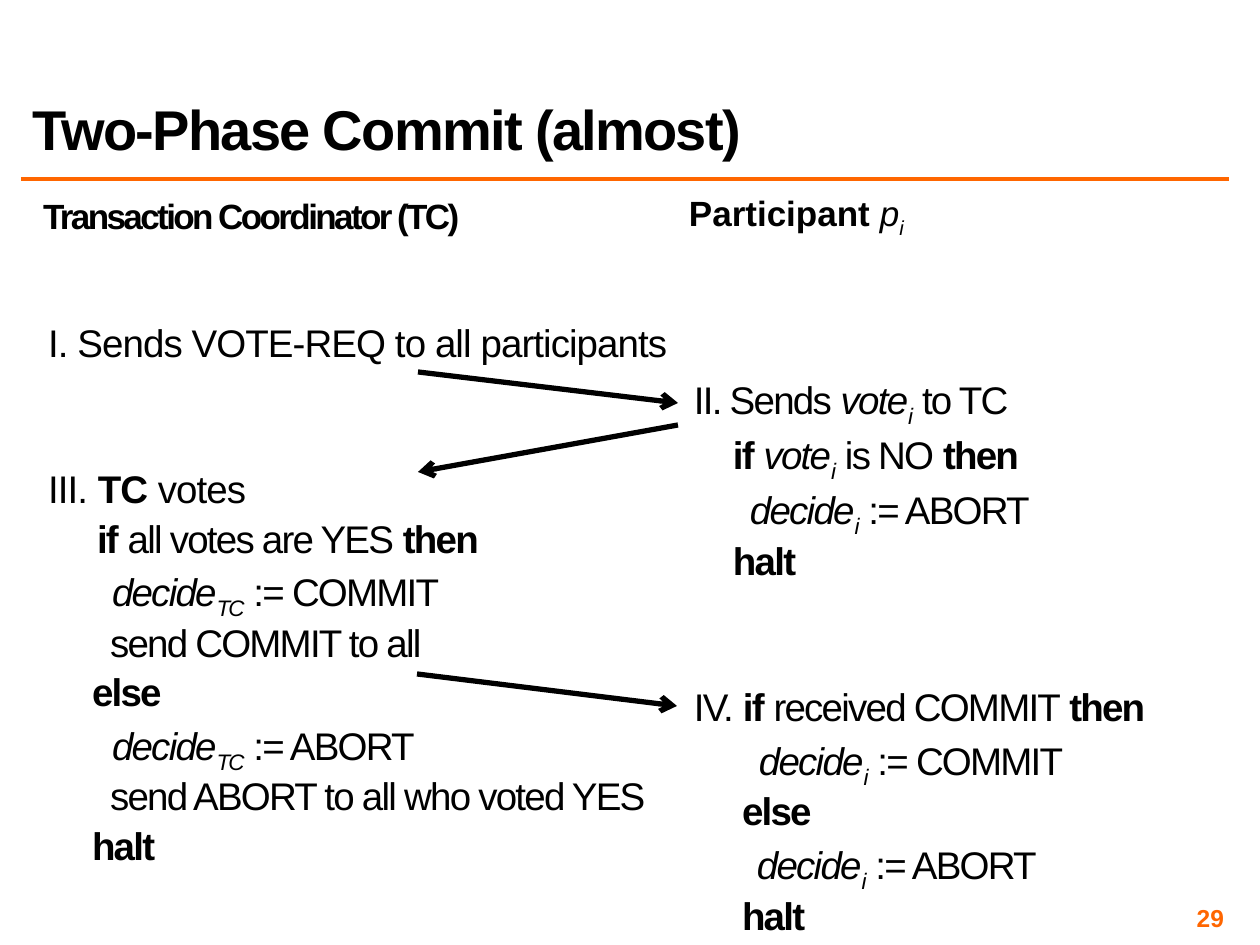
from dataclasses import dataclass
from pptx import Presentation
from pptx.dml.color import RGBColor
from pptx.enum.shapes import MSO_CONNECTOR as Connector
from pptx.enum.text import MSO_ANCHOR as Anchor, MSO_AUTO_SIZE as AutoSize, PP_ALIGN as Align
from pptx.oxml.ns import qn
from pptx.util import Emu, Pt
from lxml.etree import SubElement

PX = 914400 // 126


@dataclass(frozen=True)
class Theme:
    font: str = "Arial"
    ink: RGBColor = RGBColor(0x00, 0x00, 0x00)
    accent: RGBColor = RGBColor(0xFF, 0x66, 0x00)
    title: int = 32
    heading: int = 20
    body: int = 22
    number: int = 14
    gap: float = 4.4        # before each line
    step_gap: float = 60    # before the next protocol step


THEME = Theme()

# Spans are (text, style): b bold, i italic, s subscript
TITLE = [("Two-Phase Commit (almost)", "b")]
COORDINATOR = [("Transaction Coordinator (TC)", "b")]
PARTICIPANT = [("Participant ", "b"), ("p", "i"), ("i", "is")]
NUMBER = [("29", "b")]
VOTE = [("vote", "i"), ("i", "is")]
DECIDE = [("decide", "i"), ("i", "is")]
DECIDE_TC = [("decide", "i"), ("TC", "is")]

# Lines are (indent px, letter spacing pt, space before pt, spans)
COORDINATOR_STEPS = [
    (0, -0.5, THEME.gap, [("I. Sends VOTE-REQ to all participants", "")]),
    (0, -0.5, THEME.step_gap, [("III. ", ""), ("TC ", "b"), ("votes", "")]),
    (49, -1, THEME.gap, [("if", "b"), (" all votes are YES ", ""), ("then", "b")]),
    (64, -1, THEME.gap, DECIDE_TC + [(" := COMMIT", "")]),
    (62, -1, THEME.gap, [("send COMMIT to all", "")]),
    (44, -1, THEME.gap, [("else", "b")]),
    (64, -1, THEME.gap, DECIDE_TC + [(" := ABORT", "")]),
    (62, -1, THEME.gap, [("send ABORT to all who voted YES", "")]),
    (44, -1, THEME.gap, [("halt", "b")]),
]
PARTICIPANT_STEPS = [
    (0, -1, THEME.gap, [("II. Sends ", "")] + VOTE + [(" to TC", "")]),
    (39, -1, THEME.gap, [("if ", "b")] + VOTE + [(" is NO ", ""), ("then", "b")]),
    (56, -1, THEME.gap, DECIDE + [(" := ABORT", "")]),
    (39, -1, THEME.gap, [("halt", "b")]),
    (0, -1, THEME.step_gap, [("IV. ", ""), ("if", "b"), (" received COMMIT ", ""), ("then", "b")]),
    (65, -1, THEME.gap, DECIDE + [(" := COMMIT", "")]),
    (48, -1, THEME.gap, [("else", "b")]),
    (63, -1, THEME.gap, DECIDE + [(" := ABORT", "")]),
    (48, -1, THEME.gap, [("halt", "b")]),
]

# Messages: tip x, tip y, origin x, origin y
MESSAGES = [(678, 403, 418, 372), (418, 472, 678, 425), (677, 706, 417, 674)]


def place(box, left, top, width, height, inset, anchor):
    box.left, box.top, box.width, box.height = (Emu(v * PX) for v in (left, top, width, height))
    frame = box.text_frame
    frame.word_wrap = True
    frame.auto_size = AutoSize.NONE
    frame.vertical_anchor = anchor
    frame.margin_left = frame.margin_right = Emu(inset * PX)
    frame.margin_top = frame.margin_bottom = Emu(min(inset, 6) * PX)
    return frame


def write(para, spans, size, spacing=0, color=THEME.ink, align=Align.LEFT):
    para.alignment = align
    for text, style in spans:
        span = para.add_run()
        span.text = text
        font = span.font
        font.name, font.size = THEME.font, Pt(size)
        font.color.rgb = color
        font.bold, font.italic = "b" in style, "i" in style
        props = span._r.get_or_add_rPr()
        if spacing:
            props.set("spc", str(int(spacing * 100)))
        if "s" in style:
            props.set("baseline", "-25000")


def write_steps(frame, lines):
    for index, (indent, spacing, before, spans) in enumerate(lines):
        para = frame.add_paragraph() if index else frame.paragraphs[0]
        write(para, spans, THEME.body, spacing)
        para.line_spacing, para.space_before = 0.9, Pt(before)
        props = para._p.get_or_add_pPr()
        props.set("marL", str(indent * PX))
        props.set("indent", "0")
        SubElement(props, qn("a:buNone"))


def draw_line(page, ends, color, width, arrow=False):
    line = page.shapes.add_connector(Connector.STRAIGHT, *(Emu(v * PX) for v in ends))
    line.line.color.rgb, line.line.width = color, Pt(width)
    if arrow:
        SubElement(line.line._get_or_add_ln(), qn("a:headEnd"), type="arrow")
    SubElement(line._element.spPr, qn("a:effectLst"))


def main():
    deck = Presentation()
    deck.slide_width, deck.slide_height = Emu(1260 * PX), Emu(945 * PX)
    page = deck.slides.add_slide(deck.slide_layouts[3])
    title, left_body, right_body = page.placeholders

    # Title and rule
    frame = place(title, 21, 19, 1103, 148, 12, Anchor.BOTTOM)
    write(frame.paragraphs[0], TITLE, THEME.title, -1)
    frame.paragraphs[0].line_spacing = 0.8
    draw_line(page, (21, 179, 1229, 179), THEME.accent, 2)

    # Column headings
    for spans, left, width, spacing in ((COORDINATOR, 43, 423, -1.5), (PARTICIPANT, 689, 275, 0)):
        box = page.shapes.add_textbox(0, 0, 0, 0)
        frame = place(box, left, 194, width, 43, 0, Anchor.MIDDLE)
        write(frame.paragraphs[0], spans, THEME.heading, spacing)

    # Protocol steps
    for body, left, top, lines in ((left_body, 43, 319, COORDINATOR_STEPS),
                                   (right_body, 689, 372, PARTICIPANT_STEPS)):
        write_steps(place(body, left, top, 664, 672, 5, Anchor.TOP), lines)

    # Messages between the columns
    for ends in MESSAGES:
        draw_line(page, ends, THEME.ink, 3, arrow=True)

    # Page number
    frame = place(page.shapes.add_textbox(0, 0, 0, 0), 935, 903, 294, 29, 5, Anchor.MIDDLE)
    write(frame.paragraphs[0], NUMBER, THEME.number, color=THEME.accent, align=Align.RIGHT)

    deck.save("out.pptx")


if __name__ == "__main__":
    main()
